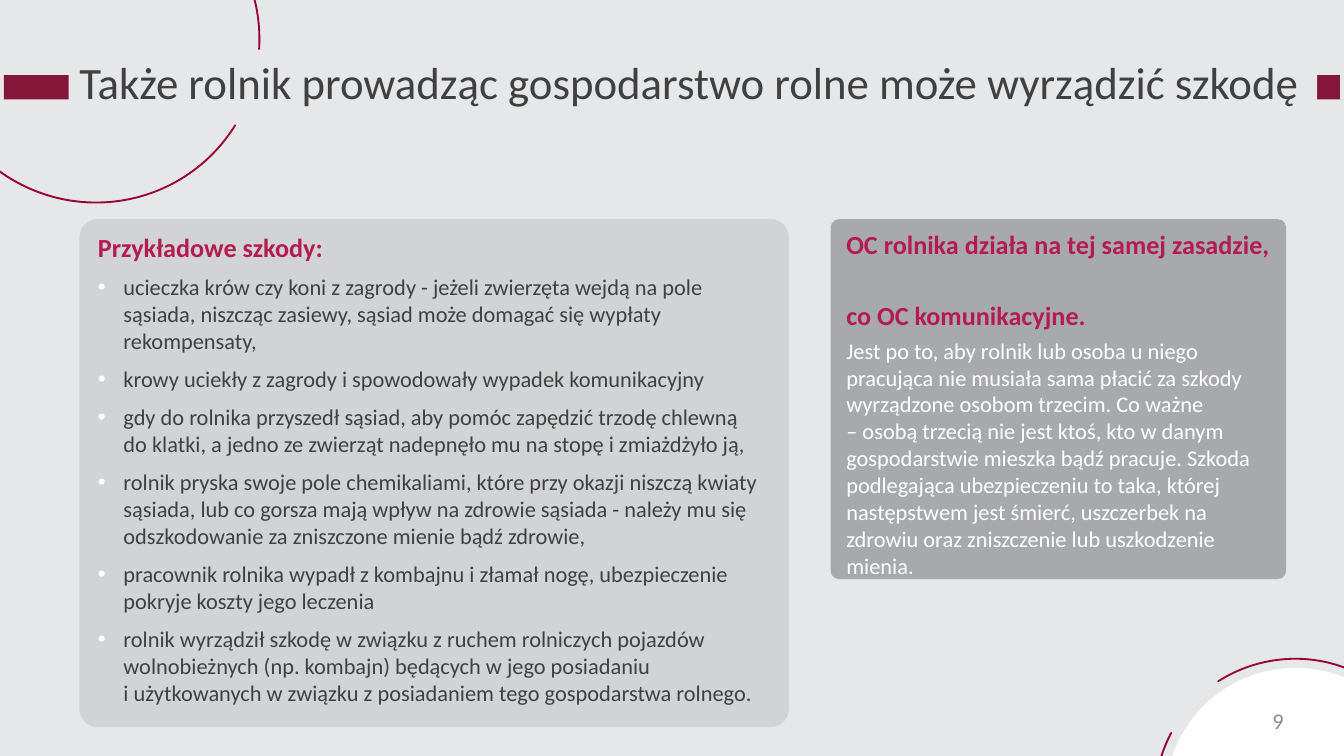
"""Build a slide on farmer liability cover, laid on a grid of 100 columns by 56.25 rows."""
import pptx
import pptx.dml.color
import pptx.enum.shapes
import pptx.enum.text
import pptx.oxml.ns
import pptx.util
import lxml.etree

COLS, ROWS = 100, 56.25
CELL = pptx.util.Inches(10) / COLS
KIND = pptx.enum.shapes.MSO_SHAPE
ALIGN = pptx.enum.text.PP_ALIGN
WINE, PINK, GREY, WHITE, BACK = "86153A", "B41C4F", "404040", "FFFFFF", "E6E7E9"

HARMS = [
    "ucieczka krów czy koni z zagrody - jeżeli zwierzęta wejdą na pole sąsiada, niszcząc zasiewy, "
    "sąsiad może domagać się wypłaty rekompensaty,",
    "krowy uciekły z zagrody i spowodowały wypadek komunikacyjny",
    "gdy do rolnika przyszedł sąsiad, aby pomóc zapędzić trzodę chlewną \v"
    "do klatki, a jedno ze zwierząt nadepnęło mu na stopę i zmiażdżyło ją,",
    "rolnik pryska swoje pole chemikaliami, które przy okazji niszczą kwiaty sąsiada, lub co gorsza "
    "mają wpływ na zdrowie sąsiada - należy mu się odszkodowanie za zniszczone mienie bądź zdrowie,",
    "pracownik rolnika wypadł z kombajnu i złamał nogę, ubezpieczenie pokryje koszty jego leczenia",
    "rolnik wyrządził szkodę w związku z ruchem rolniczych pojazdów wolnobieżnych (np. kombajn) "
    "będących w jego posiadaniu \vi użytkowanych w związku z posiadaniem tego gospodarstwa rolnego.",
]
COVER = (
    "Jest po to, aby rolnik lub osoba u niego pracująca nie musiała sama płacić za szkody "
    "wyrządzone osobom trzecim. Co ważne \v– osobą trzecią nie jest ktoś, kto w danym "
    "gospodarstwie mieszka bądź pracuje. Szkoda podlegająca ubezpieczeniu to taka, której "
    "następstwem jest śmierć, uszczerbek na zdrowiu oraz zniszczenie lub uszkodzenie mienia."
)


def grid(*cells):
    """Turn grid counts into slide lengths."""
    return [pptx.util.Emu(round(cell * CELL)) for cell in cells]


def paint(target, tone):
    """Give a fill or a font a hex colour."""
    if hasattr(target, "solid"):
        target.solid()
        target = target.fore_color
    else:
        target = target.color
    target.rgb = pptx.dml.color.RGBColor.from_string(tone)


def add_form(slide, kind, place, tone, bends=(), turn=0):
    """Add a flat preset shape without an outline."""
    form = slide.shapes.add_shape(kind, *grid(*place))
    form.shadow.inherit = False
    form.rotation = turn
    paint(form.fill, tone)
    form.line.fill.background()
    for index, bend in enumerate(bends):
        form.adjustments[index] = bend
    return form


def add_arc(slide, place, turn, start):
    """Add a thin arc of a ring."""
    arc = add_form(slide, KIND.BLOCK_ARC, place, WINE, (start, 1.76, 0), turn)
    paint(arc.line.fill, "990033")
    arc.line.width = pptx.util.Pt(1)


def set_frame(form, pads=(1, 0.5, 1, 0.5), anchor="TOP"):
    """Set the wrapping, insets and anchor of a text frame."""
    frame = form.text_frame
    frame.word_wrap = True
    frame.margin_left, frame.margin_top, frame.margin_right, frame.margin_bottom = grid(*pads)
    frame.vertical_anchor = getattr(pptx.enum.text.MSO_ANCHOR, anchor)
    return frame


def write(para, text, size, tone, bold=False, gap=0, align=ALIGN.LEFT):
    """Fill and format one paragraph."""
    para.text = text
    para.alignment = align
    para.space_before = pptx.util.Pt(gap)
    for run in para.runs:
        run.font.name = "Calibri"
        run.font.size = pptx.util.Pt(size)
        run.font.bold = bold
        paint(run.font, tone)


def add_dot(para, tone):
    """Give a paragraph a hanging bullet."""
    props = para._p.get_or_add_pPr()
    dent = grid(1.9)[0]
    props.set("marL", str(dent))
    props.set("indent", str(-dent))
    name = pptx.oxml.ns.qn
    shade = lxml.etree.SubElement(props, name("a:buClr"))
    lxml.etree.SubElement(shade, name("a:srgbClr"), val=tone)
    lxml.etree.SubElement(props, name("a:buFont"), typeface="Arial")
    lxml.etree.SubElement(props, name("a:buChar"), char="•")


def add_card(slide, place, tone, bend, head):
    """Add a rounded card with a bold heading."""
    card = add_form(slide, KIND.ROUNDED_RECTANGLE, place, tone, [bend])
    frame = set_frame(card)
    write(frame.paragraphs[0], head, 14, PINK, True, 3)
    return frame


def add_decor(slide):
    """Add the rings, the bar and the corner disc."""
    add_arc(slide, (-5.1, -9.3, 24.4, 24.5), 12.3, 170.46)
    add_arc(slide, (-5.1, -9.4, 24.4, 24.5), 132.3, 155.79)
    add_form(slide, KIND.RECTANGLE, (0.3, 5.6, COLS - 0.6, 1.8), WINE)
    add_arc(slide, (85.9, 49.2, 21.1, 20.6), 205.2, 170.46)
    add_arc(slide, (85.6, 49.1, 21.1, 20.6), 325.2, 163.48)
    add_form(slide, KIND.OVAL, (86.7, 49.7, 19.4, 19.4), WHITE)


def main():
    """Build and save the slide."""
    deck = pptx.Presentation()
    deck.slide_width, deck.slide_height = grid(COLS, ROWS)
    slide = deck.slides.add_slide(deck.slide_layouts[6])
    paint(slide.background.fill, BACK)
    add_decor(slide)

    head = "OC rolnika działa na tej samej zasadzie, \vco OC komunikacyjne."
    cover = add_card(slide, (61.8, 16.3, 33.9, 26.8), "A8A9AD", 0.024, head)
    write(cover.add_paragraph(), COVER, 12, WHITE, gap=3)

    number = set_frame(slide.shapes.add_textbox(*grid(82.7, 52.1, 13.8, 3)), anchor="MIDDLE")
    write(number.paragraphs[0], "9", 12, "8C8C8C", align=ALIGN.RIGHT)

    band = add_form(slide, KIND.RECTANGLE, (5.1, 3.7, 92.9, 5.5), BACK)
    title = set_frame(band, (0.8, 0.4, 0.8, 1.2))
    write(title.paragraphs[0], "Także rolnik prowadząc gospodarstwo rolne może wyrządzić szkodę", 24, GREY)

    harms = add_card(slide, (5.9, 16.3, 52.8, 37.8), "D2D3D5", 0.036, "Przykładowe szkody:")
    for harm in HARMS:
        para = harms.add_paragraph()
        write(para, harm, 12, GREY, gap=6)
        add_dot(para, WHITE)

    deck.save("out.pptx")


if __name__ == "__main__":
    main()
